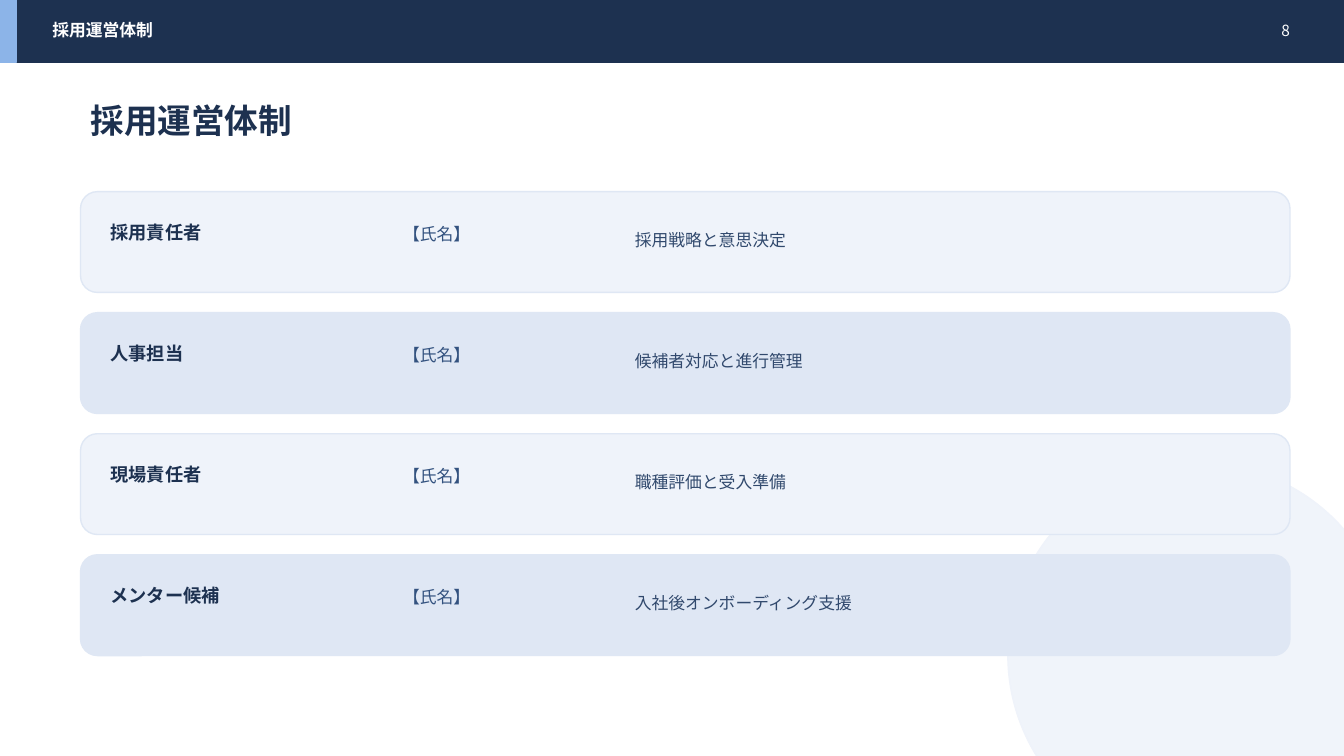
from lxml import etree
from pptx import Presentation
from pptx.dml.color import RGBColor
from pptx.enum.lang import MSO_LANGUAGE_ID
from pptx.enum.shapes import MSO_SHAPE
from pptx.enum.text import MSO_ANCHOR, PP_ALIGN
from pptx.oxml.ns import qn
from pptx.util import Cm, Pt

RECTANGLE = MSO_SHAPE.RECTANGLE
ROUNDED = MSO_SHAPE.ROUNDED_RECTANGLE
OVAL = MSO_SHAPE.OVAL
MIDDLE = MSO_ANCHOR.MIDDLE
LEFT, RIGHT = PP_ALIGN.LEFT, PP_ALIGN.RIGHT
JAPANESE = MSO_LANGUAGE_ID.JAPANESE

WHITE = RGBColor(0xFF, 0xFF, 0xFF)
NAVY = RGBColor(0x1D, 0x31, 0x50)
SKY = RGBColor(0x8C, 0xB4, 0xE8)
PALE = RGBColor(0xEF, 0xF3, 0xFA)
MIST = RGBColor(0xDF, 0xE7, 0xF4)
BLUE = RGBColor(0x33, 0x52, 0x7F)
SLATE = RGBColor(0x31, 0x49, 0x6D)

BODY_FONT = "Noto Sans CJK JP"
TITLE_FONT = "Times New Roman"

TITLE = "採用運営体制"
ROLES = [
    ("採用責任者", "【氏名】", "採用戦略と意思決定"),
    ("人事担当", "【氏名】", "候補者対応と進行管理"),
    ("現場責任者", "【氏名】", "職種評価と受入準備"),
    ("メンター候補", "【氏名】", "入社後オンボーディング支援"),
]
FIRST_ROW_TOP = 4.83
ROW_PITCH = 3.05


class SlideBuilder:
    """Draws styled elements on one slide; all lengths are in centimetres."""

    def __init__(self, page):
        self.page = page

    def panel(self, kind, left, top, width, height, fill, line=None, opacity=100):
        shape = self.page.shapes.add_shape(kind, Cm(left), Cm(top), Cm(width), Cm(height))
        shape.shadow.inherit = False
        shape.fill.solid()
        shape.fill.fore_color.rgb = fill
        shape.line.color.rgb = line or fill
        shape.line.width = Pt(1)
        if opacity < 100:
            color = shape.fill._xPr.find(qn("a:solidFill"))[0]
            etree.SubElement(color, qn("a:alpha")).set("val", str(opacity * 1000))

    def label(self, text, left, top, width, height, size, color,
              bold=False, align=LEFT, font=BODY_FONT):
        box = self.page.shapes.add_textbox(Cm(left), Cm(top), Cm(width), Cm(height))
        frame = box.text_frame
        frame.word_wrap = True
        frame.vertical_anchor = MIDDLE
        frame.margin_top = frame.margin_bottom = Cm(0.13)
        frame.text = text
        para = frame.paragraphs[0]
        para.alignment = align
        span = para.runs[0]
        span.font.name = font
        span.font.size = Pt(size)
        span.font.bold = bold
        span.font.color.rgb = color
        span.font.language_id = JAPANESE
        # East Asian typeface for the Japanese characters
        latin = span.font._element.find(qn("a:latin"))
        east_asian = etree.Element(qn("a:ea"))
        east_asian.set("typeface", BODY_FONT)
        latin.addnext(east_asian)

    def role_row(self, top, fill, role, person, duty):
        self.panel(ROUNDED, 2.03, top, 30.48, 2.54, fill, MIST)
        self.label(role, 2.54, top + 0.71, 6.86, 0.61, 13, NAVY, bold=True)
        self.label(person, 9.91, top + 0.76, 5.33, 0.61, 12, BLUE)
        self.label(duty, 15.75, top + 0.64, 15.75, 1.14, 12, SLATE)


def main():
    deck = Presentation()
    deck.slide_width, deck.slide_height = Cm(33.87), Cm(19.05)
    page = deck.slides.add_slide(deck.slide_layouts[6])
    page.background.fill.solid()
    page.background.fill.fore_color.rgb = WHITE
    builder = SlideBuilder(page)

    # Corner decoration
    builder.panel(OVAL, 25.4, 11.68, 9.65, 9.65, PALE, opacity=88)

    # Header bar
    builder.panel(RECTANGLE, 0, 0, 33.87, 1.57, NAVY)
    builder.panel(RECTANGLE, 0, 0, 0.41, 1.57, SKY)
    builder.label(TITLE, 1.07, 0.43, 22.35, 0.66, 12, WHITE, bold=True)
    builder.label("8", 30.86, 0.43, 1.9, 0.66, 11, WHITE, align=RIGHT)

    # Title
    builder.label(TITLE, 2.03, 2.41, 28.96, 1.22, 24, NAVY, bold=True, font=TITLE_FONT)

    # Role rows in alternating tints
    for index, texts in enumerate(ROLES):
        fill = MIST if index % 2 else PALE
        builder.role_row(FIRST_ROW_TOP + index * ROW_PITCH, fill, *texts)

    deck.save("out.pptx")


if __name__ == "__main__":
    main()
